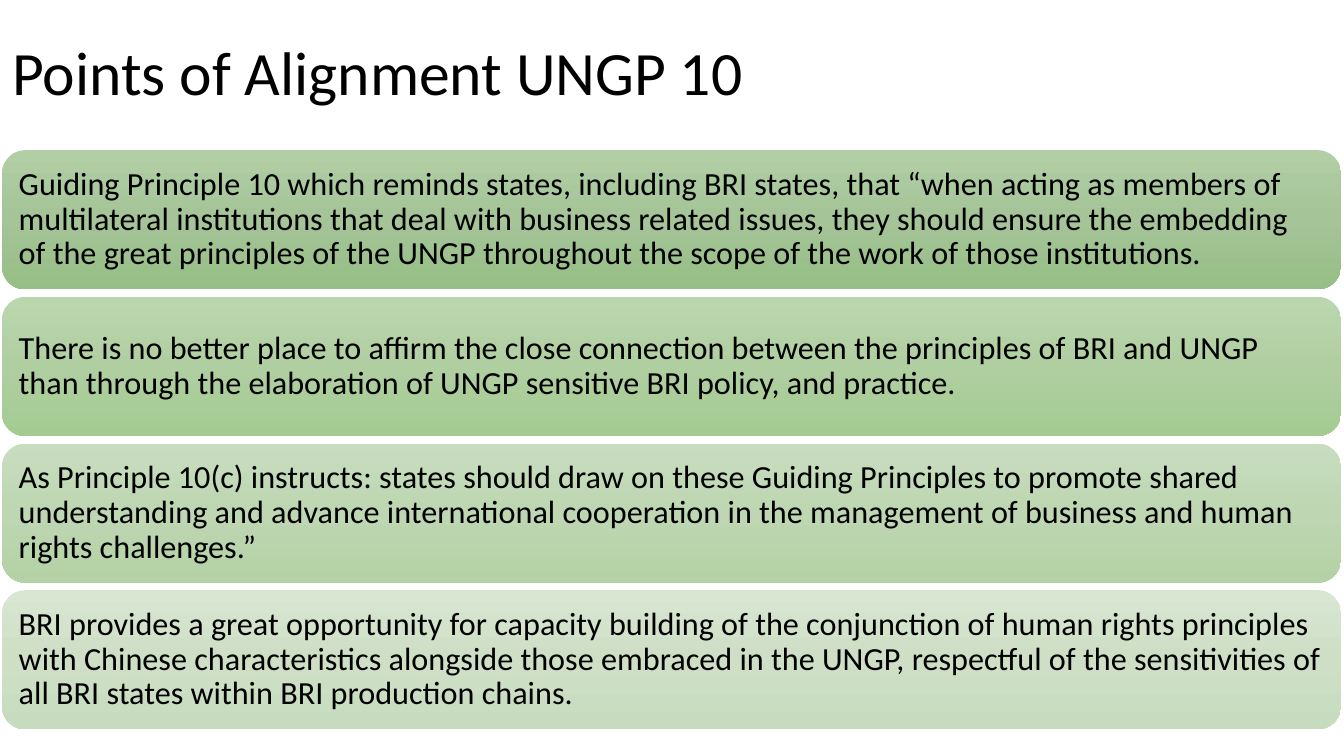
from copy import deepcopy
from dataclasses import dataclass

from pptx import Presentation
from pptx.dml.color import RGBColor
from pptx.dml.fill import FillFormat
from pptx.enum.shapes import MSO_SHAPE as Preset
from pptx.enum.text import MSO_ANCHOR as Anchor, PP_ALIGN as Align
from pptx.oxml.ns import qn
from pptx.shapes.autoshape import Shape
from pptx.slide import Slide
from pptx.text.text import TextFrame
from pptx.util import Inches, Pt

LEFT, TOP = 0.02, 1.49
WIDTH, HEIGHT = 13.28, 1.38
PITCH = 1.455


@dataclass
class Point:
    text: str
    shades: tuple[str, str, str]


POINTS = [
    Point("Guiding Principle 10 which reminds states, including BRI states, that “when "
          "acting as members of multilateral institutions that deal with business related "
          "issues, they should ensure the embedding of the great principles of the UNGP "
          "throughout the scope of the work of those institutions.",
          ("B1CEA4", "A5C498", "96BE85")),
    Point("There is no better place to affirm the close connection between the principles "
          "of BRI and UNGP than through the elaboration of UNGP sensitive BRI policy, "
          "and practice.",
          ("BBD6AE", "B0CFA1", "A3CB91")),
    Point("As Principle 10(c) instructs: states should draw on these Guiding Principles to "
          "promote shared understanding and advance international cooperation in the "
          "management of business and human rights challenges.”",
          ("C8DDBF", "BED6B2", "B4D2A6")),
    Point("BRI provides a great opportunity for capacity building of the conjunction of "
          "human rights principles with Chinese characteristics alongside those embraced "
          "in the UNGP, respectful of the sensitivities of all BRI states within BRI "
          "production chains.",
          ("D8E6D2", "CEDFC6", "C7DCBE")),
]


def color(code: str) -> RGBColor:
    return RGBColor.from_string(code)


def write(frame: TextFrame, text: str, size: float) -> None:
    """Set one left-aligned, vertically centred paragraph."""
    frame.word_wrap = True
    frame.vertical_anchor = Anchor.MIDDLE
    para = frame.paragraphs[0]
    para.alignment = Align.LEFT
    para.line_spacing = 0.9
    run = para.add_run()
    run.text = text
    run.font.name = "Calibri"
    run.font.size = Pt(size)
    run.font.color.rgb = color("000000")


def shade(card: Shape, shades: tuple[str, str, str]) -> None:
    """Fill from top to bottom with three evenly spaced stops."""
    fill: FillFormat = card.fill
    fill.gradient()
    fill.gradient_angle = 270
    stops = card.element.spPr.find(qn("a:gradFill")).find(qn("a:gsLst"))
    stops.insert(1, deepcopy(stops[0]))
    for index, (stop, code) in enumerate(zip(fill.gradient_stops, shades)):
        stop.position = index / 2
        stop.color.rgb = color(code)


def add_card(slide: Slide, point: Point, top: float) -> None:
    card = slide.shapes.add_shape(Preset.ROUNDED_RECTANGLE, Inches(LEFT), Inches(top),
                                  Inches(WIDTH), Inches(HEIGHT))
    card.shadow.inherit = False
    card.line.fill.background()
    shade(card, point.shades)
    frame = card.text_frame
    frame.margin_left = frame.margin_right = Inches(0.1)
    frame.margin_top = frame.margin_bottom = Inches(0.1)
    write(frame, point.text, 23)


def main() -> None:
    deck = Presentation()
    deck.slide_width, deck.slide_height = Inches(13.33), Inches(7.5)
    slide = deck.slides.add_slide(deck.slide_layouts[5])

    title = slide.shapes.title
    title.left, title.top = Inches(0.02), Inches(0.02)
    title.width, title.height = Inches(8.14), Inches(1.45)
    write(title.text_frame, "Points of Alignment UNGP 10", 44)

    for index, point in enumerate(POINTS):
        add_card(slide, point, TOP + index * PITCH)
    deck.save("out.pptx")


if __name__ == "__main__":
    main()
